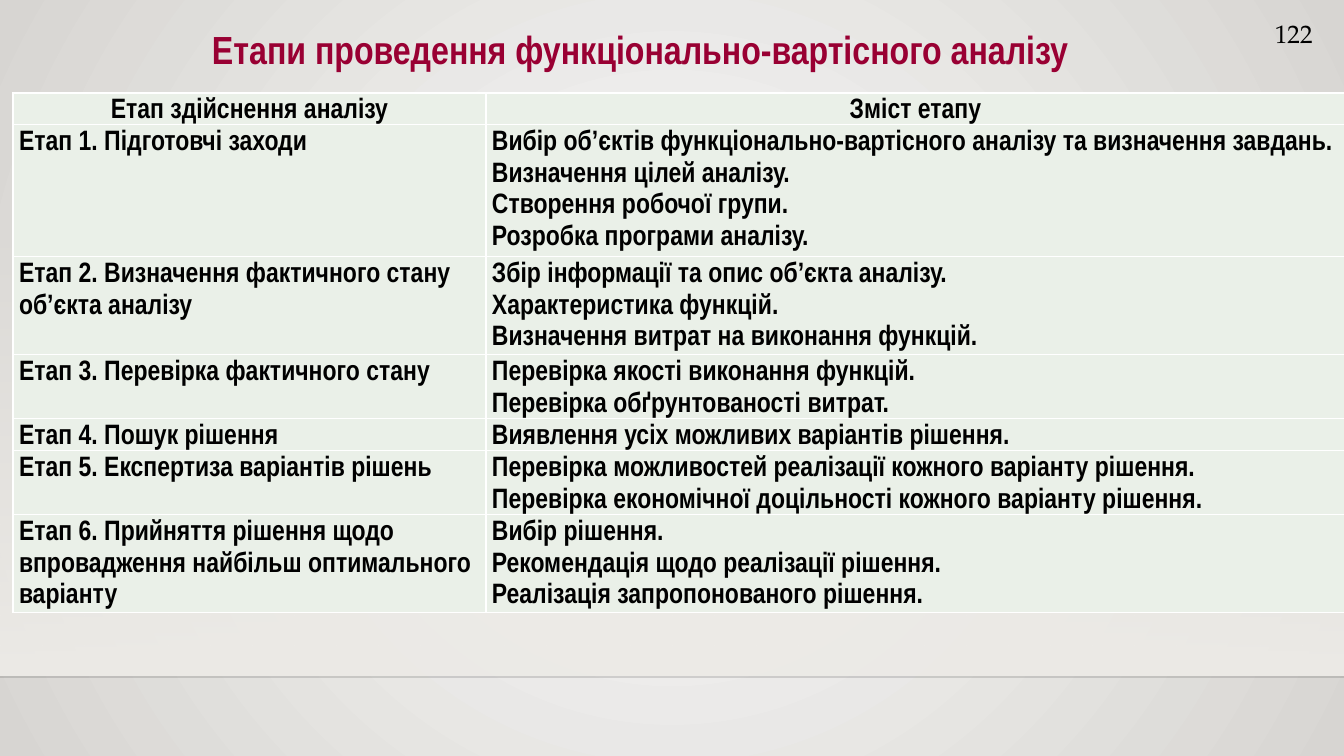
from lxml import etree
from pptx import Presentation
from pptx.dml.color import RGBColor
from pptx.enum.shapes import MSO_CONNECTOR, MSO_SHAPE
from pptx.enum.text import MSO_ANCHOR, MSO_AUTO_SIZE, PP_ALIGN
from pptx.oxml.ns import qn
from pptx.util import Pt

PX = 914400 / 100.8
W, H = 1344, 756
RECT, STRAIGHT = MSO_SHAPE.RECTANGLE, MSO_CONNECTOR.STRAIGHT
MIDDLE, NO_FIT = MSO_ANCHOR.MIDDLE, MSO_AUTO_SIZE.NONE
LEFT, CENTER, JUSTIFY = PP_ALIGN.LEFT, PP_ALIGN.CENTER, PP_ALIGN.JUSTIFY

BLACK = RGBColor(0x00, 0x00, 0x00)
CRIMSON = RGBColor(0x99, 0x00, 0x33)
CELL = RGBColor(0xEA, 0xF0, 0xE8)
BAND = RGBColor(0xED, 0xEB, 0xE7)
BG_CENTER = RGBColor(0xFA, 0xFA, 0xF9)
BG_EDGE = RGBColor(0xD7, 0xD5, 0xD2)
RULE = RGBColor(0x00, 0x00, 0x01)
NARROW, SERIF = "Arial Narrow", "TeX Gyre Pagella"

STAGES = [
    ("Етап здійснення аналізу", ["Зміст етапу"]),
    ("Етап 1. Підготовчі заходи",
     ["Вибір об’єктів функціонально-вартісного аналізу та визначення завдань.",
      "Визначення цілей аналізу.",
      "Створення робочої групи.",
      "Розробка програми аналізу."]),
    ("Етап 2. Визначення фактичного стану об’єкта аналізу",
     ["Збір інформації та опис об’єкта аналізу.",
      "Характеристика функцій.",
      "Визначення витрат на виконання функцій."]),
    ("Етап 3. Перевірка фактичного стану",
     ["Перевірка якості виконання функцій.",
      "Перевірка обґрунтованості витрат."]),
    ("Етап 4. Пошук рішення", ["Виявлення усіх можливих варіантів рішення."]),
    ("Етап 5. Експертиза варіантів рішень",
     ["Перевірка можливостей реалізації кожного варіанту рішення.",
      "Перевірка економічної доцільності кожного варіанту рішення."]),
    ("Етап 6. Прийняття рішення щодо впровадження найбільш оптимального варіанту",
     ["Вибір рішення.",
      "Рекомендація щодо реалізації рішення.",
      "Реалізація запропонованого рішення."]),
]
ROW_HEIGHTS = [31, 132, 98, 64, 32, 64, 98]
COL_WIDTHS = [473, 859]


def px(*values):
    return [round(v * PX) for v in values]


def style(p, font, size, color, bold=False):
    for r in p.runs:
        r.font.name, r.font.size, r.font.bold = font, Pt(size), bold
        r.font.color.rgb = color


prs = Presentation()
prs.slide_width, prs.slide_height = px(W, H)
s = prs.slides.add_slide(prs.slide_layouts[5])

# Radial background
fill = s.background.fill
fill.gradient()
for stop, color in zip(fill.gradient_stops, (BG_CENTER, BG_EDGE)):
    stop.color.rgb = color
grad = s.background._cSld.find(".//" + qn("a:gradFill"))
grad.remove(grad.find(qn("a:lin")))
circle = etree.SubElement(grad, qn("a:path"), path="circle")
etree.SubElement(circle, qn("a:fillToRect"), l="50000", t="50000", r="50000", b="50000")

# Fading band and the rule under it
band = s.shapes.add_shape(RECT, *px(0, 222, W, 454))
band.shadow.inherit = False
band.line.fill.background()
band.fill.gradient()
band.fill.gradient_angle = 270
for stop in band.fill.gradient_stops:
    stop.color.rgb = BAND
first_color = band._element.spPr.find(".//" + qn("a:srgbClr"))
etree.SubElement(first_color, qn("a:alpha"), val="0")

rule = s.shapes.add_connector(STRAIGHT, *px(0, 677, W, 677))
rule.line.color.rgb = RULE
rule.line.width = Pt(1)
rule_color = rule._element.spPr.find(".//" + qn("a:srgbClr"))
etree.SubElement(rule_color, qn("a:alpha"), val="20000")
etree.SubElement(rule._element.spPr, qn("a:effectLst"))

# Stage table
table = s.shapes.add_table(len(STAGES), 2, *px(13, 93, sum(COL_WIDTHS), sum(ROW_HEIGHTS))).table
for col, width in zip(table.columns, px(*COL_WIDTHS)):
    col.width = width
for row, height in zip(table.rows, px(*ROW_HEIGHTS)):
    row.height = height

for i, (stage, tasks) in enumerate(STAGES):
    for j, lines in enumerate(([stage], tasks)):
        cell = table.cell(i, j)
        cell.margin_left, cell.margin_right = px(6, 6)
        cell.margin_top = cell.margin_bottom = 0
        tc_pr = cell._tc.get_or_add_tcPr()
        for side in ("a:lnL", "a:lnR", "a:lnT", "a:lnB"):
            ln = etree.SubElement(tc_pr, qn(side), w="12700")
            solid = etree.SubElement(ln, qn("a:solidFill"))
            etree.SubElement(solid, qn("a:srgbClr"), val="FFFFFF")
        cell.fill.solid()
        cell.fill.fore_color.rgb = CELL
        cell.text_frame.text = "\n".join(lines)
        for p in cell.text_frame.paragraphs:
            p.alignment = CENTER if i == 0 else (LEFT, JUSTIFY)[j]
            p.line_spacing = 1.2
            style(p, NARROW, 20, BLACK, True)

# Title
title = s.shapes.title
title.left, title.top, title.width, title.height = px(155, 20, 937, 52)
tf = title.text_frame
tf.text = "Етапи проведення функціонально-вартісного аналізу"
tf.word_wrap, tf.auto_size, tf.vertical_anchor = True, NO_FIT, MIDDLE
tf.margin_left, tf.margin_top, tf.margin_right, tf.margin_bottom = px(10, 5, 10, 0)
p = tf.paragraphs[0]
p.alignment = LEFT
p._p.get_or_add_pPr().set("indent", str(px(47)[0]))
style(p, NARROW, 28, CRIMSON, True)

# Page number
number = s.shapes.add_textbox(*px(1265, 13, 67, 40))
number.text_frame.word_wrap = True
number.text_frame.text = "122"
style(number.text_frame.paragraphs[0], SERIF, 18, BLACK)

prs.save("out.pptx")
